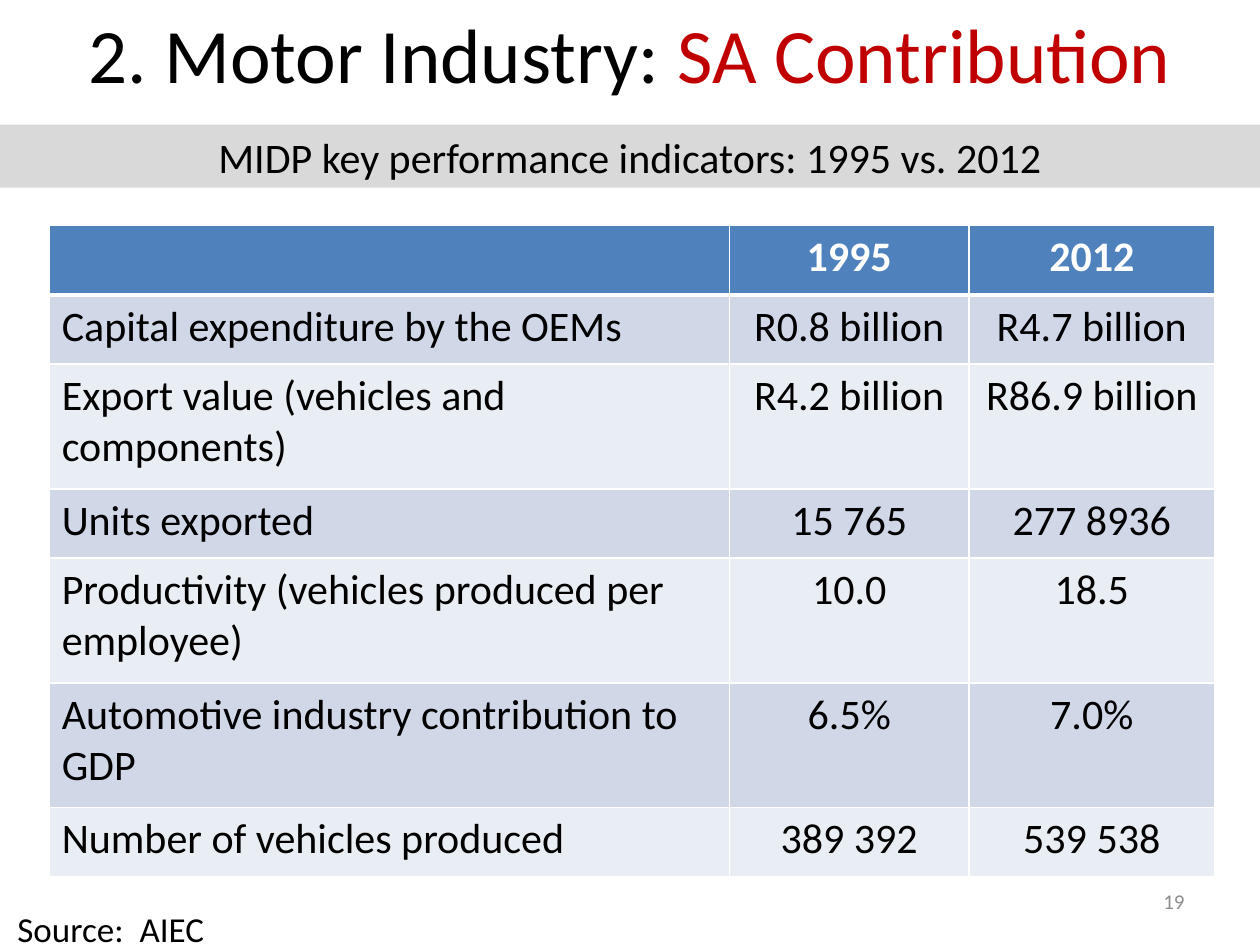
from lxml import etree
from pptx import Presentation
from pptx.dml.color import RGBColor
from pptx.enum.shapes import MSO_SHAPE
from pptx.enum.text import MSO_ANCHOR, PP_ALIGN
from pptx.oxml.ns import qn
from pptx.util import Inches, Pt

LEFT, CENTER, RIGHT = PP_ALIGN.LEFT, PP_ALIGN.CENTER, PP_ALIGN.RIGHT
TOP, MIDDLE = MSO_ANCHOR.TOP, MSO_ANCHOR.MIDDLE
RECTANGLE = MSO_SHAPE.RECTANGLE

BLACK = RGBColor(0x00, 0x00, 0x00)
WHITE = RGBColor(0xFF, 0xFF, 0xFF)
RED = RGBColor(0xC0, 0x00, 0x00)
BAND_GREY = RGBColor(0xD9, 0xD9, 0xD9)
NUMBER_GREY = RGBColor(0x8C, 0x8C, 0x8C)
HEADER_BLUE = RGBColor(0x4F, 0x81, 0xBD)
ROW_FILLS = (RGBColor(0xE9, 0xED, 0xF4), RGBColor(0xD0, 0xD8, 0xE8))

FONT = "Calibri"
WIDTH, HEIGHT = Inches(10), Inches(7.5)

# Table grid, in inches
COLUMN_WIDTHS = (5.4, 1.9, 1.95)
LINE_ROW, WRAPPED_ROW = 0.55, 0.99
WRAP_LENGTH = 35  # longer labels take two lines

INDICATORS = (
    ("", "1995", "2012"),
    ("Capital expenditure by the OEMs", "R0.8 billion", "R4.7 billion"),
    ("Export value (vehicles and components)", "R4.2 billion", "R86.9 billion"),
    ("Units exported", "15 765", "277 8936"),
    ("Productivity (vehicles produced per employee)", "10.0", "18.5"),
    ("Automotive industry contribution to GDP", "6.5%", "7.0%"),
    ("Number of vehicles produced", "389 392", "539 538"),
)


def add_text(frame, text, size=24, color=BLACK, bold=False, align=LEFT):
    """Append a formatted run to the first paragraph of a text frame."""
    paragraph = frame.paragraphs[0]
    paragraph.alignment = align
    run = paragraph.add_run()
    run.text = text
    font = run.font
    font.name, font.size, font.bold = FONT, Pt(size), bold
    font.color.rgb = color


def place(shape, left, top, width, height):
    shape.left, shape.top = Inches(left), Inches(top)
    shape.width, shape.height = Inches(width), Inches(height)


def add_title(slide):
    title = slide.shapes.title
    place(title, 0, 0, 10, 0.94)
    frame = title.text_frame
    frame.vertical_anchor = TOP
    add_text(frame, "2. Motor Industry: ", size=44, align=CENTER)
    add_text(frame, "SA Contribution", size=44, color=RED, align=CENTER)


def add_band(slide, text):
    band = slide.shapes.add_shape(RECTANGLE, 0, Inches(0.99), WIDTH, Inches(0.5))
    band.shadow.inherit = False
    band.fill.solid()
    band.fill.fore_color.rgb = BAND_GREY
    band.line.fill.background()
    band.text_frame.vertical_anchor = MIDDLE
    add_text(band.text_frame, text, align=CENTER)


def add_label(slide, text, box, anchor=TOP, wrap=True, **text_format):
    label = slide.shapes.add_textbox(*(Inches(length) for length in box))
    label.text_frame.word_wrap = wrap
    label.text_frame.vertical_anchor = anchor
    add_text(label.text_frame, text, **text_format)


def set_borders(cell, **widths):
    """Draw white cell borders; widths in points by side: L, R, T, B."""
    properties = cell._tc.get_or_add_tcPr()
    for side, width in widths.items():
        line = etree.SubElement(properties, qn(f"a:ln{side}"), w=str(Pt(width)))
        fill = etree.SubElement(line, qn("a:solidFill"))
        etree.SubElement(fill, qn("a:srgbClr"), val=str(WHITE))


def fill_cell(cell, text, row, column):
    header = row == 0
    set_borders(cell, L=1, R=1, T=3 if row == 1 else 1, B=3 if header else 1)
    cell.fill.solid()
    cell.fill.fore_color.rgb = HEADER_BLUE if header else ROW_FILLS[row % 2]
    if text:
        add_text(cell.text_frame, text, bold=header,
                 color=WHITE if header else BLACK,
                 align=CENTER if column else LEFT)


def add_indicator_table(slide):
    row_heights = [WRAPPED_ROW if len(record[0]) > WRAP_LENGTH else LINE_ROW
                   for record in INDICATORS]
    table = slide.shapes.add_table(
        len(INDICATORS), len(COLUMN_WIDTHS), Inches(0.39), Inches(1.79),
        Inches(sum(COLUMN_WIDTHS)), Inches(sum(row_heights))).table
    for column, width in zip(table.columns, COLUMN_WIDTHS):
        column.width = Inches(width)
    for row, record in enumerate(INDICATORS):
        table.rows[row].height = Inches(row_heights[row])
        for column, text in enumerate(record):
            fill_cell(table.cell(row, column), text, row, column)


def main():
    presentation = Presentation()
    presentation.slide_width, presentation.slide_height = WIDTH, HEIGHT
    slide = presentation.slides.add_slide(presentation.slide_layouts[5])

    # Heading
    add_title(slide)
    add_band(slide, "MIDP key performance indicators: 1995 vs. 2012")

    # Indicators
    add_indicator_table(slide)

    # Source and page number
    add_label(slide, "Source:  AIEC", (0.04, 7.15, 1.7, 0.44), wrap=False, size=20)
    add_label(slide, "19", (7.17, 6.95, 2.33, 0.4), anchor=MIDDLE,
              size=12, color=NUMBER_GREY, align=RIGHT)

    presentation.save("out.pptx")


if __name__ == "__main__":
    main()
